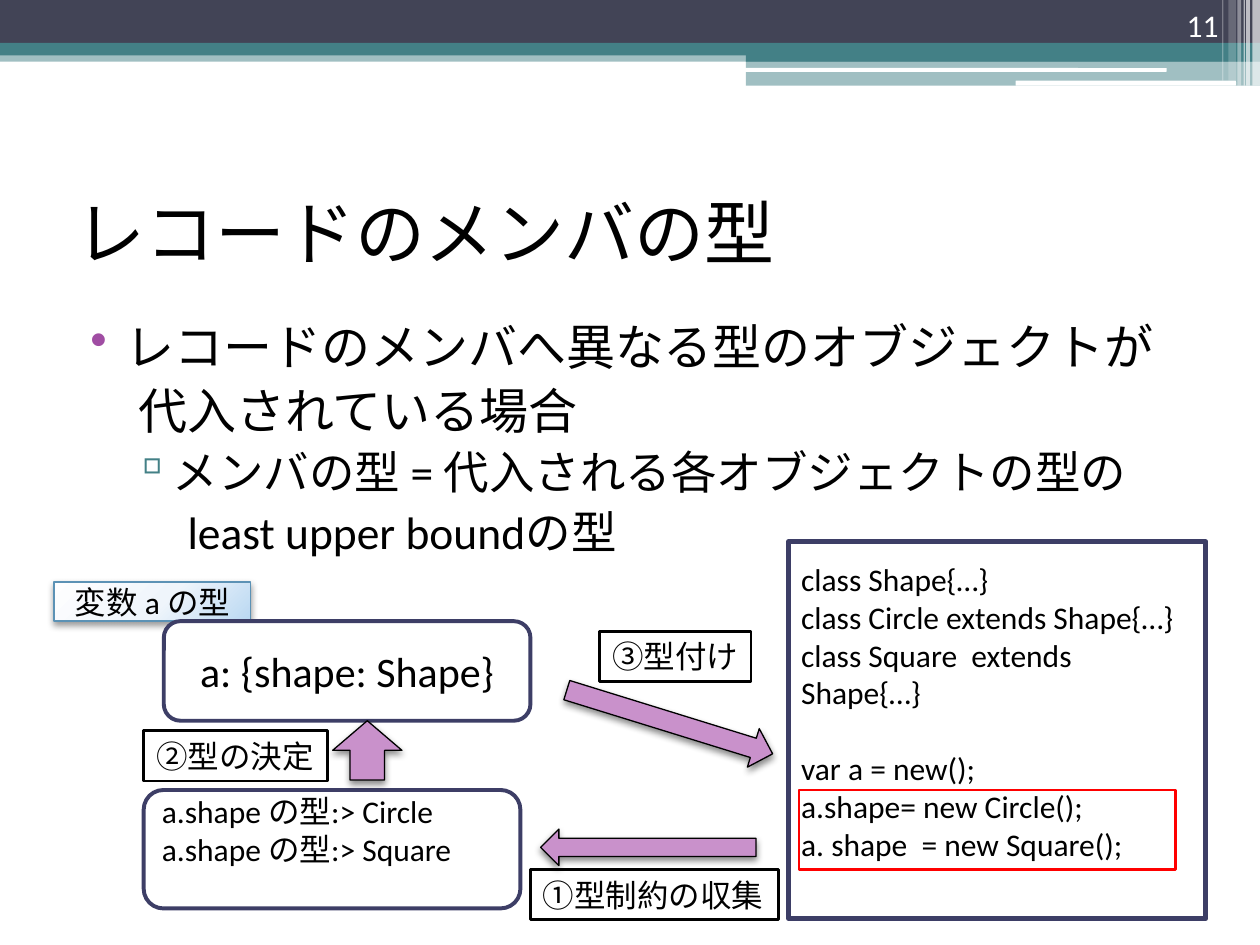
from lxml.etree import SubElement
from pptx import Presentation
from pptx.dml.color import RGBColor
from pptx.enum.shapes import MSO_SHAPE
from pptx.enum.text import MSO_ANCHOR, MSO_AUTO_SIZE, PP_ALIGN
from pptx.oxml import parse_xml
from pptx.oxml.ns import nsdecls, qn
from pptx.util import Inches, Pt


class Theme:
    font = "Calibri"
    black, white, red = "000000", "FFFFFF", "FF0000"
    slate, teal, violet = "424456", "438086", "A04DA3"
    navy, lilac, steel = "3D3E66", "C991CB", "5C92B5"
    title, body, sub, record, small = 40, 28, 26, 24, 18


def add_box(kind, at, fill=None, line=None, width=0.75, alpha=100, shadow=0):
    """Add a preset shape; alpha and shadow are opacities in percent."""
    sp = s.shapes.add_shape(kind, *map(Inches, at))
    sp.shadow.inherit = False
    if fill:
        sp.fill.solid()
        sp.fill.fore_color.rgb = RGBColor.from_string(fill)
        if alpha < 100:
            color = sp.fill._xPr.find(qn("a:solidFill"))[0]
            SubElement(color, qn("a:alpha"), val=str(alpha * 1000))
    else:
        sp.fill.background()
    if line:
        sp.line.color.rgb = RGBColor.from_string(line)
        sp.line.width = Pt(width)
    else:
        sp.line.fill.background()
    if shadow:
        sp._element.spPr.find(qn("a:effectLst")).append(parse_xml(
            f'<a:outerShdw {nsdecls("a")} blurRad="{Pt(4)}" dist="{Pt(2)}" dir="5400000" '
            f'rotWithShape="0"><a:srgbClr val="{Theme.black}">'
            f'<a:alpha val="{shadow * 1000}"/></a:srgbClr></a:outerShdw>'))
    return sp


def write(sp, lines, size, color=Theme.black, align=PP_ALIGN.LEFT, anchor=MSO_ANCHOR.MIDDLE):
    tf = sp.text_frame
    tf.word_wrap = True
    tf.vertical_anchor = anchor
    for i, line in enumerate(lines):
        p = tf.paragraphs[0] if i == 0 else tf.add_paragraph()
        p.text = line
        p.alignment = align
        p.font.name = Theme.font
        p.font.size = Pt(size)
        p.font.color.rgb = RGBColor.from_string(color)
    return tf


prs = Presentation()
prs.slide_width, prs.slide_height = Inches(10), Inches(7.5)
s = prs.slides.add_slide(prs.slide_layouts[6])
RECT, ROUND, ARROW = MSO_SHAPE.RECTANGLE, MSO_SHAPE.ROUNDED_RECTANGLE, MSO_SHAPE.RIGHT_ARROW

# Header bands
for at, fill, alpha in [
    ((0, 0.4, 10, 0.09), Theme.teal, 50),
    ((0, 0, 10, 0.34), Theme.slate, 100),
    ((0, 0.34, 10, 0.1), Theme.teal, 100),
    ((5.92, 0.39, 4.08, 0.1), Theme.teal, 100),
    ((5.92, 0.48, 4.08, 0.2), Theme.teal, 50),
]:
    add_box(RECT, at, fill, alpha=alpha)
for at in [(5.91, 0.54, 3.35, 0.03), (8.06, 0.64, 1.75, 0.04)]:
    add_box(ROUND, at, Theme.white)
for left, width, height, alpha in [
    (9.94, 0.06, 0.68, 65), (9.89, 0.03, 0.68, 65), (9.87, 0.01, 0.68, 60),
    (9.82, 0.03, 0.68, 40), (9.75, 0.06, 0.64, 20), (9.7, 0.01, 0.64, 30),
]:
    add_box(RECT, (left, 0, width, height), Theme.white, alpha=alpha)

# Title, bullets and slide number
title = s.shapes.add_textbox(*map(Inches, (0.5, 1.25, 9, 1.17)))
write(title, ["レコードのメンバの型"], Theme.title)

bullets = [
    ("レコードのメンバへ異なる型のオブジェクトが", Theme.body, 0.4, -0.28, "•", Theme.violet),
    ("代入されている場合", Theme.body, 0.5, 0, None, None),
    ("メンバの型 = 代入される各オブジェクトの型の", Theme.sub, 0.72, -0.27, "▫", Theme.teal),
    ("least upper boundの型", Theme.sub, 0.89, 0, None, None),
]
body = s.shapes.add_textbox(*map(Inches, (0.5, 2.46, 9, 4.73)))
tf = write(body, [b[0] for b in bullets], Theme.body, anchor=MSO_ANCHOR.TOP)
for p, (_, size, margin, indent, mark, color) in zip(tf.paragraphs, bullets):
    p.font.size = Pt(size)
    p.space_before = Pt(3)
    pPr = p._p.get_or_add_pPr()
    pPr.set("marL", str(Inches(margin)))
    pPr.set("indent", str(Inches(indent)))
    if mark:
        tint = parse_xml(f'<a:buClr {nsdecls("a")}><a:srgbClr val="{color}"/></a:buClr>')
        char = parse_xml(f'<a:buChar {nsdecls("a")} char="{mark}"/>')
        pPr.find(qn("a:spcBef")).addnext(tint)
        tint.addnext(char)

number = s.shapes.add_textbox(*map(Inches, (8.94, 0, 0.83, 0.4)))
write(number, ["11"], Theme.small, Theme.white, PP_ALIGN.RIGHT, MSO_ANCHOR.BOTTOM)

# Type of the variable
tag = add_box(RECT, (0.43, 4.62, 1.56, 0.31), Theme.white, Theme.steel, shadow=40)
solid = tag._element.spPr.find(qn("a:solidFill"))
stops = "".join(f'<a:gs pos="{pos * 1000}"><a:srgbClr val="{color}"/></a:gs>'
                for pos, color in [(0, "FEFEFF"), (55, "EFF5FB"), (100, "BAD8F2")])
solid.getparent().replace(solid, parse_xml(
    f'<a:gradFill {nsdecls("a")} rotWithShape="1"><a:gsLst>{stops}</a:gsLst><a:path path="circle">'
    '<a:fillToRect l="-40000" t="-90000" r="140000" b="190000"/></a:path></a:gradFill>'))
write(tag, ["変数 a の型"], Theme.small, align=PP_ALIGN.CENTER)

record = add_box(ROUND, (1.3, 4.93, 2.91, 0.79), Theme.white, Theme.navy, 2.25)
write(record, ["a: {shape: Shape}"], Theme.record, align=PP_ALIGN.CENTER)

# Constraints and code, each with one free line at the bottom
free_line = Inches(0.3)
constraints = add_box(ROUND, (1.14, 6.27, 2.99, 0.94), None, Theme.navy, 2.25)
tf = write(constraints, ["a.shape の型:> Circle", "a.shape の型:> Square"], Theme.small)
tf.margin_bottom += free_line

code = add_box(RECT, (6.26, 4.3, 3.31, 2.99), None, Theme.navy, 3)
tf = write(code, [
    "class Shape{…}",
    "class Circle extends Shape{…}",
    "class Square  extends Shape{…}",
    "var a = new();",
    "a.shape= new Circle();",
    "a. shape  = new Square();",
], Theme.small)
tf.paragraphs[3].space_before = free_line
tf.margin_bottom += free_line
add_box(RECT, (6.34, 6.27, 2.99, 0.63), None, Theme.red, 1.5)

# Steps
for at, rotation in [
    ((4.29, 6.58, 1.71, 0.29), 180),
    ((2.68, 5.68, 0.47, 0.55), 270),
    ((4.46, 5.57, 1.71, 0.32), 17.2),
]:
    arrow = add_box(ARROW, at, Theme.lilac, Theme.black, shadow=45)
    arrow.rotation = rotation
for text, left, top, width in [
    ("①型制約の収集", 4.21, 6.9, 1.97),
    ("②型の決定", 1.14, 5.8, 1.46),
    ("③型付け", 4.76, 5.01, 1.2),
]:
    step = add_box(RECT, (left, top, width, 0.4), None, Theme.black, 1.5)
    tf = write(step, [text], Theme.small, anchor=MSO_ANCHOR.TOP)
    tf.word_wrap = False
    tf.auto_size = MSO_AUTO_SIZE.SHAPE_TO_FIT_TEXT

prs.save("out.pptx")
